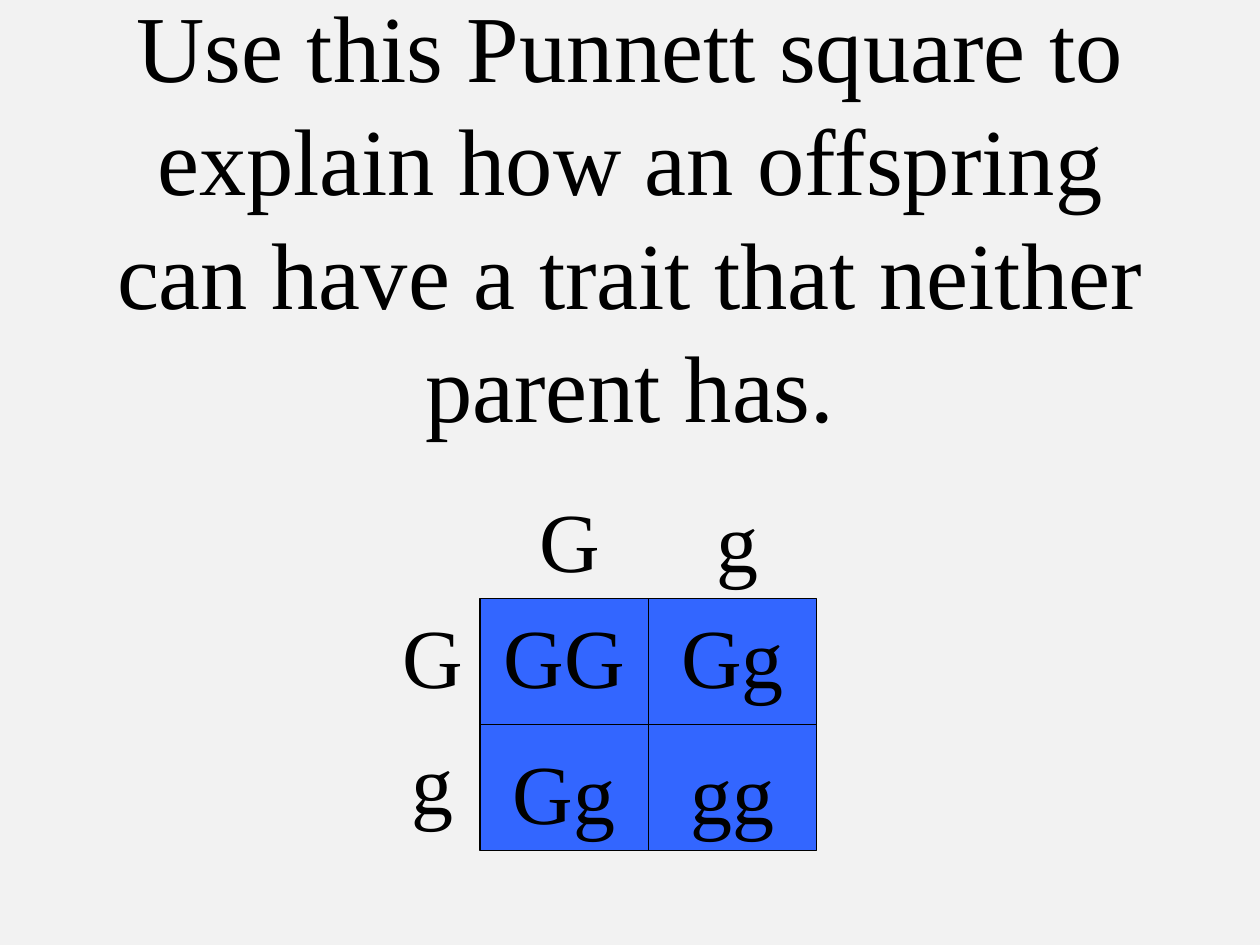
import dataclasses

import pptx
import pptx.dml.color
import pptx.enum.shapes
import pptx.enum.text
import pptx.oxml
import pptx.util

FONT = "Times New Roman"
BLACK = "000000"
LEFT, TOP = 3.81, 4.75
COL_W, ROW_H = 1.335, 1.0
LABEL_H = 0.9
SIDE_W = 0.75
TITLE = ("Use this Punnett square to explain how an offspring "
         "can have a trait that neither parent has.")


@dataclasses.dataclass
class Allele:
    text: str
    col: float
    row: float
    width: float = COL_W
    dx: float = 0
    dy: float = 0


ALLELES = [
    Allele("G", 0, 0, SIDE_W, dx=-SIDE_W),
    Allele("g", 0, 1, SIDE_W, dx=-SIDE_W),
    Allele("G", 0, -1, 0.92, dx=0.25, dy=0.08),
    Allele("g", 1, -1, SIDE_W, dx=0.33, dy=0.08),
    Allele("GG", 0, 0),
    Allele("Gg", 1, 0),
    Allele("Gg", 0, 1, dy=0.08),
    Allele("gg", 1, 1, dy=0.08),
]


def rgb(value: str) -> pptx.dml.color.RGBColor:
    return pptx.dml.color.RGBColor.from_string(value)


def inches(*values: float) -> list[pptx.util.Length]:
    return [pptx.util.Inches(v) for v in values]


def add_text(s, text: str, box: tuple, size: int, middle: bool = False):
    tf = s.shapes.add_textbox(*inches(*box)).text_frame
    tf.word_wrap = True
    if middle:
        tf.vertical_anchor = pptx.enum.text.MSO_ANCHOR.MIDDLE
    p = tf.paragraphs[0]
    p.text = text
    p.alignment = pptx.enum.text.PP_ALIGN.CENTER
    p.font.name = FONT
    p.font.size = pptx.util.Pt(size)
    p.font.color.rgb = rgb(BLACK)
    return tf


def add_allele(s, allele: Allele) -> None:
    x = LEFT + allele.col * COL_W + allele.dx
    y = TOP + allele.row * ROW_H + allele.dy
    tf = add_text(s, allele.text, (x, y, allele.width, LABEL_H), 48)
    tf.auto_size = pptx.enum.text.MSO_AUTO_SIZE.SHAPE_TO_FIT_TEXT
    spacing = pptx.oxml.parse_xml(
        '<a:spcBef xmlns:a="http://schemas.openxmlformats.org/drawingml/2006/main">'
        '<a:spcPct val="50000"/></a:spcBef>')
    tf.paragraphs[0]._p.get_or_add_pPr().insert(0, spacing)


def set_line(line) -> None:
    line.color.rgb = rgb(BLACK)
    line.width = pptx.util.Pt(0.75)


def add_divider(s, x1: float, y1: float, x2: float, y2: float) -> None:
    sp = s.shapes.add_connector(
        pptx.enum.shapes.MSO_CONNECTOR.STRAIGHT, *inches(x1, y1, x2, y2))
    set_line(sp.line)
    sp._element.spPr.append(pptx.oxml.parse_xml(
        '<a:effectLst xmlns:a="http://schemas.openxmlformats.org/drawingml/2006/main"/>'))


def add_square(s) -> None:
    sp = s.shapes.add_shape(
        pptx.enum.shapes.MSO_SHAPE.FLOWCHART_PROCESS,
        *inches(LEFT, TOP, 2 * COL_W, 2 * ROW_H))
    sp.shadow.inherit = False
    sp.fill.solid()
    sp.fill.fore_color.rgb = rgb("3366FF")
    set_line(sp.line)
    add_divider(s, LEFT + COL_W, TOP, LEFT + COL_W, TOP + 2 * ROW_H)
    add_divider(s, LEFT, TOP + ROW_H, LEFT + 2 * COL_W, TOP + ROW_H)


def main() -> None:
    prs = pptx.Presentation()
    prs.slide_width, prs.slide_height = inches(10, 7.5)
    s = prs.slides.add_slide(prs.slide_layouts[6])
    s.background.fill.solid()
    s.background.fill.fore_color.rgb = rgb("F2F2F2")
    add_text(s, TITLE, (0.75, 1.08, 8.5, 1.25), 54, middle=True)
    add_square(s)
    for allele in ALLELES:
        add_allele(s, allele)
    prs.save("out.pptx")


if __name__ == "__main__":
    main()
